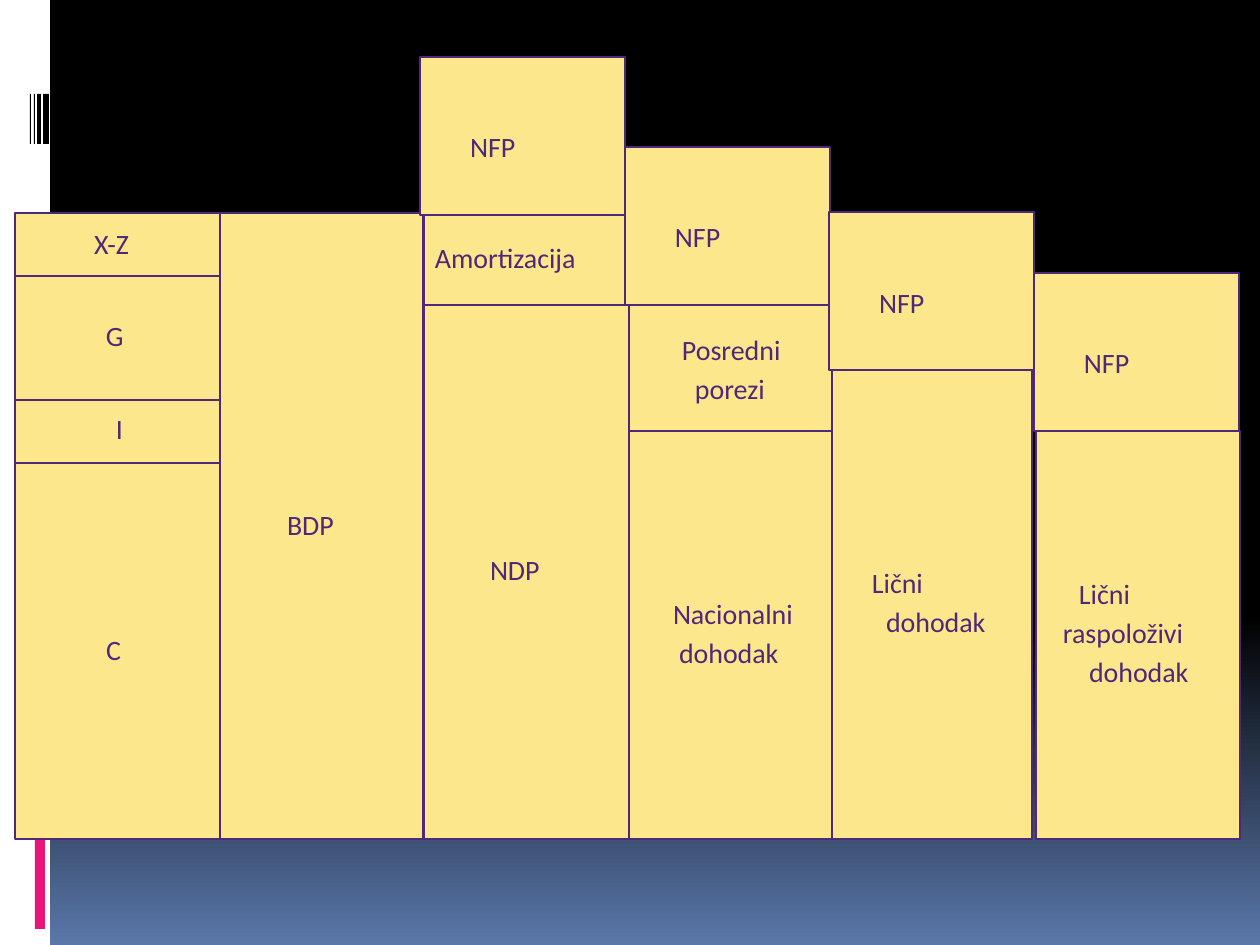
from dataclasses import dataclass

from pptx import Presentation
from pptx.dml.color import RGBColor
from pptx.enum.shapes import MSO_SHAPE
from pptx.enum.text import MSO_ANCHOR, PP_ALIGN
from pptx.slide import Slide
from pptx.shapes.autoshape import Shape
from pptx.util import Emu, Pt

SCALE = 914400 / 126
FLOOR = 839
PITCH = 39
WHITE = RGBColor(0xFF, 0xFF, 0xFF)
BLACK = RGBColor(0, 0, 0)
BLUE = RGBColor(0x5A, 0x77, 0xA9)
PINK = RGBColor(0xEA, 0x15, 0x7A)
CREAM = RGBColor(0xFC, 0xE7, 0x8C)
PLUM = RGBColor(0x50, 0x28, 0x78)
FONT = {"name": "Calibri", "size": Pt(16)}
FLAT = {"margin_left": 0, "margin_top": 0, "margin_right": 0,
        "margin_bottom": 0, "word_wrap": False}


@dataclass
class Word:
    text: str
    left: int
    wide: int


@dataclass
class Block:
    top: int
    base: int
    words: list[Word]


@dataclass
class Stack:
    left: int
    wide: int
    blocks: list[Block]


@dataclass
class Band:
    left: int
    top: int
    wide: int
    tall: int
    fill: RGBColor


STACKS = [
    Stack(1036, 204, [
        Block(431, 577, [Word("Lični", 1079, 58), Word("raspoloživi", 1063, 141),
                         Word("dohodak", 1089, 108)])]),
    Stack(829, 203, [
        Block(368, 566, [Word("Lični", 872, 66), Word("dohodak", 886, 108)])]),
    Stack(628, 204, [
        Block(305, 333, [Word("Posredni", 682, 108), Word("porezi", 695, 76)]),
        Block(431, 597, [Word("Nacionalni", 673, 131), Word("dohodak", 679, 108)])]),
    Stack(424, 205, [
        Block(213, 241, [Word("Amortizacija", 435, 154)]),
        Block(305, 553, [Word("NDP", 490, 59)])]),
    Stack(220, 203, [Block(213, 508, [Word("BDP", 287, 58)])]),
    Stack(15, 205, [
        Block(213, 227, [Word("X-Z", 94, 45)]),
        Block(276, 319, [Word("G", 106, 23)]),
        Block(400, 412, [Word("I", 116, 8)]),
        Block(463, 633, [Word("C", 106, 20)])]),
]
BANDS = [Band(0, 0, 50, 945, WHITE), Band(35, 696, 10, 233, PINK)] + [
    Band(left, 94, wide, 50, BLACK)
    for left, wide in ((43, 6), (37, 4), (34, 1), (30, 1))]
CAPS = [(420, 57), (625, 147), (829, 212), (1034, 273)]


def px(size: int) -> Emu:
    return Emu(round(size * SCALE))


def style(item: object, form: dict) -> None:
    for key, value in form.items():
        setattr(item, key, value)


def draw(slide: Slide, band: Band) -> Shape:
    rect = slide.shapes.add_shape(
        MSO_SHAPE.RECTANGLE, px(band.left), px(band.top),
        px(band.wide), px(band.tall))
    rect.shadow.inherit = False
    rect.fill.solid()
    rect.fill.fore_color.rgb = band.fill
    if band.fill == CREAM:
        rect.line.color.rgb = PLUM
        rect.line.width = Pt(1.13)
    else:
        rect.line.fill.background()
    return rect


def write(shape: Shape, text: str, form: dict) -> None:
    style(shape.text_frame, form)
    para = shape.text_frame.paragraphs[0]
    para.alignment = PP_ALIGN.LEFT
    run = para.add_run()
    run.text = text
    style(run.font, FONT)
    run.font.color.rgb = PLUM


def label(slide: Slide, block: Block) -> None:
    for row, word in enumerate(block.words):
        box = slide.shapes.add_textbox(
            px(word.left), px(block.base + row * PITCH), px(word.wide), px(34))
        write(box, word.text, FLAT)


def pile(slide: Slide, stack: Stack) -> None:
    ends = [block.top for block in stack.blocks[1:]] + [FLOOR]
    for block, end in zip(stack.blocks, ends):
        draw(slide, Band(stack.left, block.top, stack.wide, end - block.top, CREAM))
        label(slide, block)


def main() -> None:
    deck = Presentation()
    style(deck, {"slide_width": px(1260), "slide_height": px(945)})
    slide = deck.slides.add_slide(deck.slide_layouts[6])
    back = slide.background.fill
    back.gradient()
    back.gradient_angle = 270
    for stop, spot, tint in zip(back.gradient_stops, (0.65, 1), (BLACK, BLUE)):
        stop.position = spot
        stop.color.rgb = tint
    for band in BANDS:
        draw(slide, band)
    for stack in STACKS:
        pile(slide, stack)
    inset = FLAT | {"margin_left": px(50), "margin_top": px(73),
                    "vertical_anchor": MSO_ANCHOR.TOP, "word_wrap": True}
    for left, top in CAPS:
        write(draw(slide, Band(left, top, 205, 158, CREAM)), "NFP", inset)
    deck.save("out.pptx")


if __name__ == "__main__":
    main()
